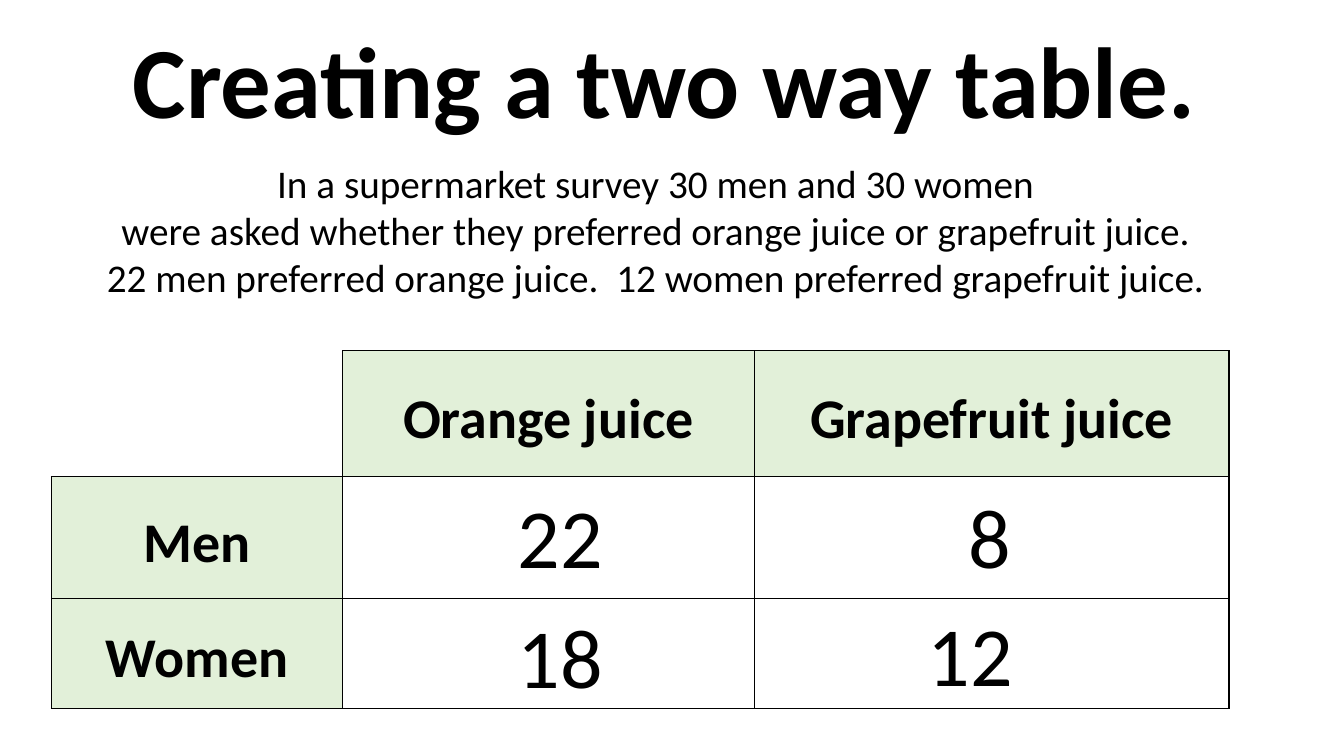
from pptx import Presentation
from pptx import util as u
from pptx.dml.color import RGBColor
from pptx.enum import text as t
from pptx.oxml import parse_xml
from pptx.oxml.ns import nsdecls

BLACK, GREEN = "000000", "E2F0D9"


def write(frame, words, size, bold=False, space=1.0, anchor=t.MSO_ANCHOR.MIDDLE):
    frame.text = words
    frame.vertical_anchor = anchor
    for para in frame.paragraphs:
        para.alignment = t.PP_ALIGN.CENTER
        para.line_spacing = space
        font = para.font
        font.name, font.size, font.bold = "Calibri", u.Pt(size), bold
        font.color.rgb = RGBColor.from_string(BLACK)


def edge(cell, side, shown):
    fill = f'<a:solidFill><a:srgbClr val="{BLACK}"/></a:solidFill>' if shown else "<a:noFill/>"
    cell._tc.get_or_add_tcPr().append(parse_xml(
        f'<a:ln{side} {nsdecls("a")} w="12700">{fill}</a:ln{side}>'))


deck = Presentation()
deck.slide_width, deck.slide_height = u.Inches(13.33), u.Inches(7.5)
slide = deck.slides.add_slide(deck.slide_layouts[5])

# Title
title = slide.shapes.title
title.left, title.top = u.Inches(0.51), u.Inches(0.23)
title.width, title.height = u.Inches(12.16), u.Inches(1.25)
write(title.text_frame, "Creating a two way table.", 72, bold=True, space=0.9)

# Survey question
box = slide.shapes.add_textbox(u.Inches(0.24), u.Inches(1.53), u.Inches(12.52), u.Inches(1.51))
box.text_frame.word_wrap = True
write(box.text_frame,
      "In a supermarket survey 30 men and 30 women\n"
      "were asked whether they preferred orange juice or grapefruit juice.\n"
      "22 men preferred orange juice.  12 women preferred grapefruit juice.",
      28, anchor=t.MSO_ANCHOR.TOP)

# Two way table
wide, high = [2.89, 4.08, 4.71], [1.25, 1.21, 1.09]
table = slide.shapes.add_table(3, 3, u.Inches(0.51), u.Inches(3.48),
                               u.Inches(sum(wide)), u.Inches(sum(high))).table
table.first_row = table.horz_banding = False
for col, width in zip(table.columns, wide):
    col.width = u.Inches(width)
for row, height in zip(table.rows, high):
    row.height = u.Inches(height)

heads = {(0, 1): "Orange juice", (0, 2): "Grapefruit juice", (1, 0): "Men", (2, 0): "Women"}
for r in range(3):
    for c in range(3):
        cell = table.cell(r, c)
        for side in "LRTB":
            edge(cell, side, (r, c) != (0, 0) or side in "RB")
        if (r, c) in heads:
            cell.fill.solid()
            cell.fill.fore_color.rgb = RGBColor.from_string(GREEN)
            cell.margin_left = cell.margin_right = u.Inches(0.07)
            cell.margin_top = cell.margin_bottom = 0
            write(cell.text_frame, heads[r, c], 40, bold=True, space=1.15)
            cell.vertical_anchor = t.MSO_ANCHOR.MIDDLE
        else:
            cell.fill.background()

# Answers laid over the table
for count, x, y, width in [("12", 9.1, 5.93, 1.05), ("22", 5.03, 4.76, 1.05),
                           ("8", 9.5, 4.76, 0.63), ("18", 5.03, 5.95, 1.05)]:
    box = slide.shapes.add_textbox(u.Inches(x), u.Inches(y), u.Inches(width), u.Inches(1.11))
    box.text_frame.word_wrap = False
    write(box.text_frame, count, 60, anchor=t.MSO_ANCHOR.TOP)

deck.save("out.pptx")
